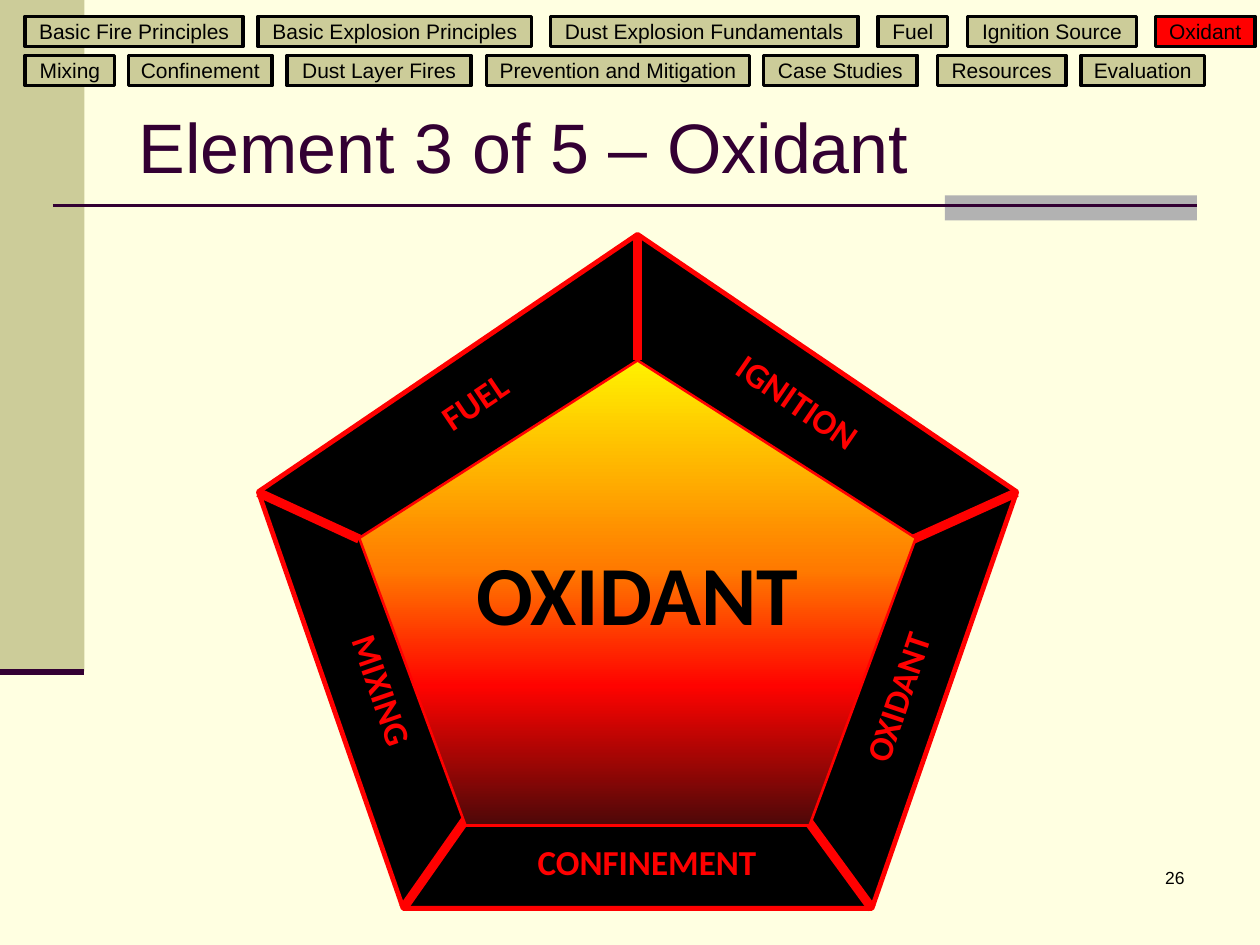
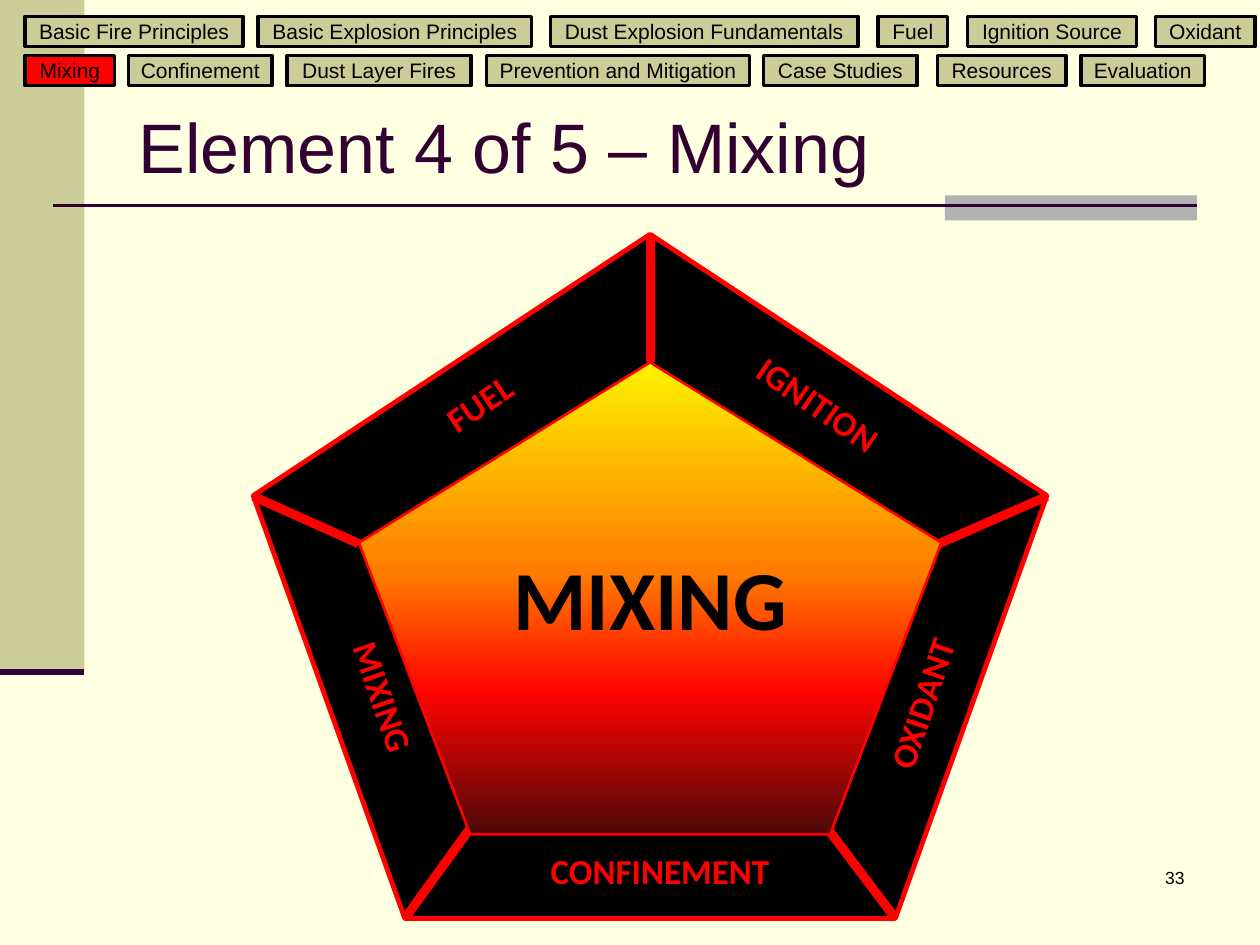
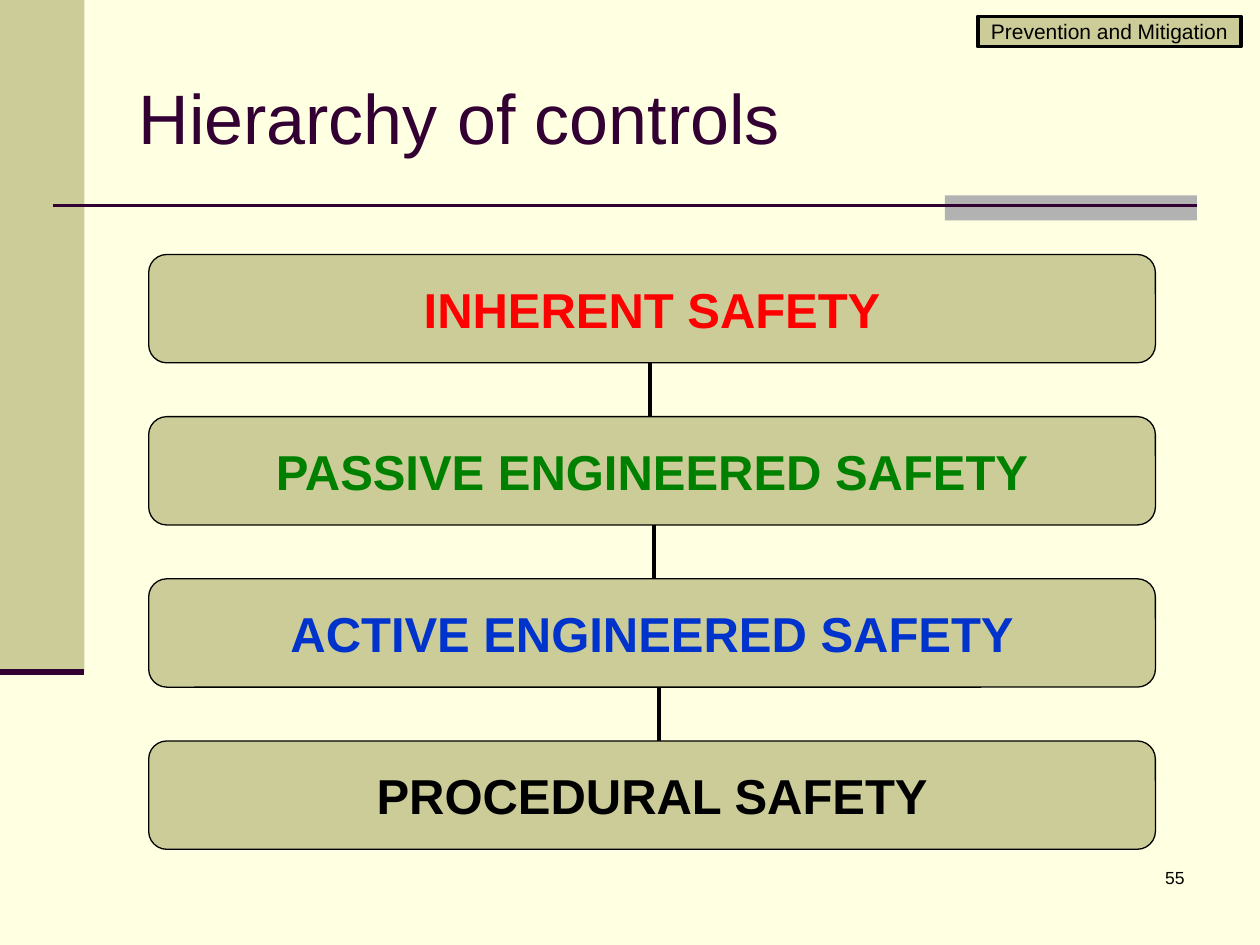
from dataclasses import dataclass
from typing import NamedTuple

from lxml.etree import SubElement
from pptx import Presentation
from pptx.dml.color import RGBColor
from pptx.enum.shapes import MSO_CONNECTOR, MSO_SHAPE as Preset
from pptx.enum.text import MSO_ANCHOR as Anchor, MSO_AUTO_SIZE, PP_ALIGN as Align
from pptx.oxml.ns import qn
from pptx.util import Inches, Pt

COLUMNS, ROWS = 100, 75
SLIDE_WIDTH, SLIDE_HEIGHT = Inches(10), Inches(7.5)

COLORS = {
    "cream": "FFFFE1",
    "khaki": "CCCC99",
    "gray": "B2B2B2",
    "plum": "330033",
    "black": "000000",
    "red": "FF0000",
    "green": "008000",
    "blue": "0033CC",
}
FLAME = [(0, "FFF200"), (45, "FF7A00"), (70, "FF0300"), (100, "4D0808")]


def rgb(color: str) -> RGBColor:
    return RGBColor.from_string(COLORS[color])


def col(columns: float) -> int:
    return round(SLIDE_WIDTH * columns / COLUMNS)


def row(rows: float) -> int:
    return round(SLIDE_HEIGHT * rows / ROWS)


class Point(NamedTuple):
    x: float
    y: float


@dataclass(frozen=True)
class Box:
    left: float
    top: float
    width: float
    height: float

    def emu(self) -> tuple[int, int, int, int]:
        return col(self.left), row(self.top), col(self.width), row(self.height)

    def point(self, share: Point) -> Point:
        return Point(self.left + self.width * share.x / 100,
                     self.top + self.height * share.y / 100)

    def inner(self, share: "Box") -> "Box":
        corner = self.point(Point(share.left, share.top))
        return Box(corner.x, corner.y,
                   self.width * share.width / 100, self.height * share.height / 100)


@dataclass(frozen=True)
class TextStyle:
    size: float
    color: str = "black"
    font: str = "Arial"
    bold: bool = False
    align: Align = Align.CENTER
    anchor: Anchor = Anchor.MIDDLE


class Tab(NamedTuple):
    topic: str
    left: float
    width: float


class Side(NamedTuple):
    factor: str
    area: Box
    rotation: float = 0


class Spoke(NamedTuple):
    start: Point
    end: Point


class Element(NamedTuple):
    title: str
    topic: str
    page: int
    frame: Box


class Control(NamedTuple):
    name: str
    color: str


TITLE = TextStyle(40, "plum", align=Align.LEFT)
PAGE_NUMBER = TextStyle(10, align=Align.RIGHT, anchor=Anchor.TOP)
TAB_TEXT = TextStyle(12)
FACTOR = TextStyle(20, "red", "Calibri", True, anchor=Anchor.TOP)
CENTER = TextStyle(48, "black", "Calibri", True, anchor=Anchor.TOP)

TAB_TOPS = (1.3, 4.4)
TAB_HEIGHT = 2.4
TAB_ROWS = (
    (Tab("Basic Fire Principles", 2, 17.3),
     Tab("Basic Explosion Principles", 20.5, 21.7),
     Tab("Dust Explosion Fundamentals", 43.7, 24.4),
     Tab("Fuel", 69.7, 5.5),
     Tab("Ignition Source", 76.8, 13.4),
     Tab("Oxidant", 91.7, 7.9)),
    (Tab("Mixing", 2, 7.1),
     Tab("Confinement", 10.2, 11.4),
     Tab("Dust Layer Fires", 22.8, 14.6),
     Tab("Prevention and Mitigation", 38.6, 20.9),
     Tab("Case Studies", 60.6, 12.2),
     Tab("Resources", 74.4, 10.2),
     Tab("Evaluation", 85.8, 9.8)),
)

SPOKES = (
    Spoke(Point(50, 0), Point(50, 18.7)),
    Spoke(Point(28.9, 84.3), Point(19.1, 100)),
    Spoke(Point(0, 38.3), Point(13.3, 45.2)),
    Spoke(Point(70.7, 84.3), Point(80.9, 100)),
    Spoke(Point(100, 38.3), Point(80.9, 48)),
)
SIDES = (
    Side("CONFINEMENT", Box(27.5, 89, 47.5, 9.7)),
    Side("MIXING", Box(-1.6, 62.7, 33.9, 10.6), 71.1),
    Side("OXIDANT", Box(68.3, 63.7, 33.9, 10.6), 288.5),
    Side("IGNITION", Box(52.4, 20.6, 36.7, 9.7), 34.5),
    Side("FUEL", Box(10.5, 20.5, 36.7, 9.7), 326),
)
FIRE = Box(13.3, 18.7, 73.4, 69)
FIRE_TEXT = Box(13.3, 44.7, 73.4, 20.2)

ELEMENTS = (
    Element("Element 3 of 5 – Oxidant", "Oxidant", 26, Box(20.5, 18.6, 60.2, 53.5)),
    Element("Element 4 of 5 – Mixing", "Mixing", 33, Box(20.1, 18.6, 63, 54.3)),
)

CONTROLS = (
    Control("INHERENT SAFETY", "red"),
    Control("PASSIVE ENGINEERED SAFETY", "green"),
    Control("ACTIVE ENGINEERED SAFETY", "blue"),
    Control("PROCEDURAL SAFETY", "black"),
)
FIRST_CONTROL = Box(11.8, 20.2, 79.9, 8.6)
CONTROL_PITCH = 12.87
LINK_COLUMNS = (51.6, 51.9, 52.3)


def write(shape, text: str, style: TextStyle, wrap: bool = True) -> None:
    frame = shape.text_frame
    frame.auto_size = MSO_AUTO_SIZE.NONE
    frame.word_wrap = wrap
    frame.vertical_anchor = style.anchor
    paragraph = frame.paragraphs[0]
    paragraph.alignment = style.align
    run = paragraph.add_run()
    run.text = text
    run.font.name = style.font
    run.font.size = Pt(style.size)
    run.font.bold = style.bold
    run.font.color.rgb = rgb(style.color)


def add_text(slide, area: Box, text: str, style: TextStyle, rotation: float = 0) -> None:
    label = slide.shapes.add_textbox(*area.emu())
    label.rotation = rotation
    write(label, text, style)


def add_panel(slide, preset: Preset, area: Box, fill: str,
              outline: str = "", weight: float = 0):
    panel = slide.shapes.add_shape(preset, *area.emu())
    panel.shadow.inherit = False
    panel.fill.solid()
    panel.fill.fore_color.rgb = rgb(fill)
    if outline:
        panel.line.color.rgb = rgb(outline)
        panel.line.width = Pt(weight)
    else:
        panel.line.fill.background()
    return panel


def add_line(slide, start: Point, end: Point, color: str, weight: float):
    line = slide.shapes.add_connector(MSO_CONNECTOR.STRAIGHT, col(start.x), row(start.y),
                                      col(end.x), row(end.y))
    line.line.color.rgb = rgb(color)
    line.line.width = Pt(weight)
    SubElement(line.element.find(qn("p:spPr")), qn("a:effectLst"))
    return line


def fill_flame(shape) -> None:
    shape.fill.gradient()
    shape.fill.gradient_angle = 270
    stops = shape.element.find(".//" + qn("a:gsLst"))
    stops.clear()
    for percent, color in FLAME:
        stop = SubElement(stops, qn("a:gs"), pos=str(percent * 1000))
        SubElement(stop, qn("a:srgbClr"), val=color)


def add_tab(slide, tab: Tab, top: float, active: bool = False) -> None:
    area = Box(tab.left, top, tab.width, TAB_HEIGHT)
    button = add_panel(slide, Preset.RECTANGLE, area, "red" if active else "khaki", "black", 2)
    button.text_frame.margin_top = button.text_frame.margin_bottom = 0
    write(button, tab.topic, TAB_TEXT, wrap=False)


def add_navigation(slide, active_topic: str) -> None:
    for top, tabs in zip(TAB_TOPS, TAB_ROWS):
        for tab in tabs:
            add_tab(slide, tab, top, tab.topic == active_topic)


def decorate_layout(layout, slide) -> None:
    decorations = (
        add_panel(slide, Preset.RECTANGLE, Box(0, 0, 6.7, 53.3), "khaki"),
        add_panel(slide, Preset.RECTANGLE, Box(75, 15.5, 20, 2), "gray"),
        add_line(slide, Point(4.2, 16.3), Point(95, 16.3), "plum", 1.5),
        add_line(slide, Point(0, 53.3), Point(6.7, 53.3), "plum", 3.5),
    )
    for decoration in decorations:
        layout.shapes.element.append(decoration.element)


def add_slide(deck, title: str, title_top: float, page: int):
    slide = deck.slides.add_slide(deck.slide_layouts[5])
    heading = slide.shapes.title
    heading.left, heading.top, heading.width, heading.height = Box(10, title_top, 85, 12.5).emu()
    write(heading, title, TITLE)
    add_text(slide, Box(74.2, 68.3, 20.8, 5), str(page), PAGE_NUMBER)
    return slide


def add_explosion_pentagon(slide, frame: Box, center_text: str) -> None:
    add_panel(slide, Preset.REGULAR_PENTAGON, frame, "black", "red", 2.75)
    for spoke in SPOKES:
        add_line(slide, frame.point(spoke.start), frame.point(spoke.end), "red", 5.25)
    for side in SIDES:
        add_text(slide, frame.inner(side.area), side.factor, FACTOR, side.rotation)
    fire = add_panel(slide, Preset.REGULAR_PENTAGON, frame.inner(FIRE), "red", "red", 1.5)
    fill_flame(fire)
    add_text(slide, frame.inner(FIRE_TEXT), center_text, CENTER)


def add_element_slide(deck, element: Element):
    slide = add_slide(deck, element.title, 5.3, element.page)
    add_navigation(slide, element.topic)
    add_explosion_pentagon(slide, element.frame, element.topic.upper())
    return slide


def add_hierarchy_slide(deck) -> None:
    slide = add_slide(deck, "Hierarchy of controls", 3, 55)
    first = FIRST_CONTROL
    for index, x in enumerate(LINK_COLUMNS):
        link_top = first.top + first.height + index * CONTROL_PITCH
        link_bottom = first.top + (index + 1) * CONTROL_PITCH
        add_line(slide, Point(x, link_top), Point(x, link_bottom), "black", 2.25)
    for index, control in enumerate(CONTROLS):
        area = Box(first.left, first.top + index * CONTROL_PITCH, first.width, first.height)
        level = add_panel(slide, Preset.ROUNDED_RECTANGLE, area, "khaki", "black", 0.75)
        write(level, control.name, TextStyle(28, control.color, bold=True), wrap=False)
    add_tab(slide, Tab("Prevention and Mitigation", 77.6, 20.9), TAB_TOPS[0])


def main() -> None:
    deck = Presentation()
    deck.slide_width, deck.slide_height = SLIDE_WIDTH, SLIDE_HEIGHT
    backdrop = deck.slide_master.background.fill
    backdrop.solid()
    backdrop.fore_color.rgb = rgb("cream")
    element_slides = [add_element_slide(deck, element) for element in ELEMENTS]
    decorate_layout(deck.slide_layouts[5], element_slides[0])
    add_hierarchy_slide(deck)
    deck.save("out.pptx")


if __name__ == "__main__":
    main()
